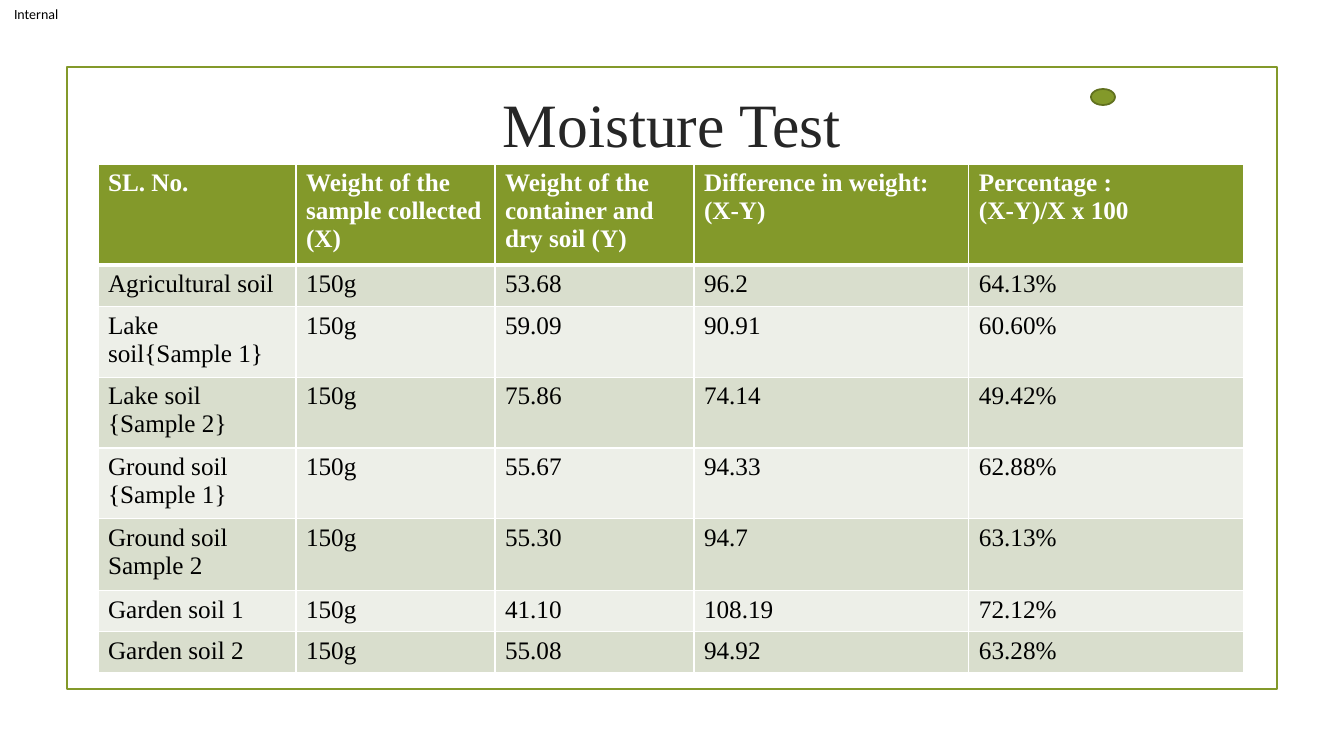
"""Build the moisture test slide."""
from lxml import etree
from pptx import Presentation
from pptx.dml.color import RGBColor
from pptx.enum.shapes import MSO_SHAPE
from pptx.enum.text import MSO_ANCHOR, PP_ALIGN
from pptx.oxml.ns import qn
from pptx.util import Emu, Pt

RECT, OVAL = MSO_SHAPE.RECTANGLE, MSO_SHAPE.OVAL
LEFT, CENTER = PP_ALIGN.LEFT, PP_ALIGN.CENTER
MIDDLE = MSO_ANCHOR.MIDDLE

TITLE = "Moisture Test"
LABEL = "Internal"
HEADS = ["SL. No.", "Weight of the sample collected (X)",
         "Weight of the container and dry soil (Y)",
         "Difference in weight: (X-Y)", "Percentage :\n(X-Y)/X x 100"]
SOILS = [
    ("Agricultural soil", "150g", "53.68", "96.2", "64.13%"),
    ("Lake soil{Sample 1}", "150g", "59.09", "90.91", "60.60%"),
    ("Lake soil {Sample 2}", "150g", "75.86", "74.14", "49.42%"),
    ("Ground soil {Sample 1}", "150g", "55.67", "94.33", "62.88%"),
    ("Ground soil Sample 2", "150g", "55.30", "94.7", "63.13%"),
    ("Garden soil 1", "150g", "41.10", "108.19", "72.12%"),
    ("Garden soil 2", "150g", "55.08", "94.92", "63.28%"),
]
WIDTHS = [198, 199, 199, 275, 275]
HEIGHTS = [97, 42, 68, 67, 68, 72, 41, 41]
COLORS = {"green": "83992A", "edge": "61711F", "dark": "262626",
          "black": "000000", "white": "FFFFFF",
          "band": "D9DECD", "pale": "EDEFE8"}
SERIF, SANS = "Times New Roman", "Calibri"


def px(n):
    return Emu(round(n * 914400 / 100.8))


def box(*lengths):
    return [px(n) for n in lengths]


def color(name):
    return RGBColor.from_string(COLORS[name])


def write(frame, text, size=18, font=SERIF, ink="black", bold=False, align=LEFT):
    frame.word_wrap = True
    frame.text = text
    for para in frame.paragraphs:
        para.alignment = align
        para.font.size = Pt(size)
        para.font.name = font
        para.font.bold = bold
        para.font.color.rgb = color(ink)


def draw(slide, kind, place, line, fill=None):
    shape = slide.shapes.add_shape(kind, *box(*place))
    shape.shadow.inherit = False
    if fill:
        shape.fill.solid()
        shape.fill.fore_color.rgb = color(fill)
    else:
        shape.fill.background()
    shape.line.color.rgb = color(line)
    shape.line.width = Pt(1.25)


def border(cell, side, width):
    props = cell._tc.get_or_add_tcPr()
    line = etree.SubElement(props, qn(f"a:ln{side}"), w=str(Pt(width)))
    fill = etree.SubElement(line, qn("a:solidFill"))
    etree.SubElement(fill, qn("a:srgbClr"), val=COLORS["white"])


def style(cell, text, row):
    head = row == 0
    for side in "LRTB":
        thick = (head and side == "B") or (row == 1 and side == "T")
        border(cell, side, 3 if thick else 1)
    cell.fill.solid()
    name = "green" if head else "band" if row % 2 else "pale"
    cell.fill.fore_color.rgb = color(name)
    write(cell.text_frame, text, ink="white" if head else "black", bold=head)


def add_grid(slide):
    rows = [HEADS, *SOILS]
    place = box(98, 164, sum(WIDTHS), sum(HEIGHTS))
    table = slide.shapes.add_table(len(rows), len(HEADS), *place).table
    for col, width in zip(table.columns, WIDTHS):
        col.width = px(width)
    for r, (row, height) in enumerate(zip(rows, HEIGHTS)):
        table.rows[r].height = px(height)
        for c, text in enumerate(row):
            style(table.cell(r, c), text, r)


def main():
    deck = Presentation()
    deck.slide_width, deck.slide_height = box(1344, 756)
    slide = deck.slides.add_slide(deck.slide_layouts[5])

    title = slide.shapes.title
    title.left, title.top, title.width, title.height = box(143, 51, 1058, 144)
    title.text_frame.vertical_anchor = MIDDLE
    write(title.text_frame, TITLE, size=44, ink="dark", align=CENTER)

    draw(slide, RECT, (67, 67, 1210, 622), "green")
    label = slide.shapes.add_textbox(*box(0, 0, 74, 28)).text_frame
    label.margin_left = px(14)
    label.margin_top = label.margin_right = label.margin_bottom = 0
    label.vertical_anchor = MIDDLE
    write(label, LABEL, size=10, font=SANS)

    add_grid(slide)
    draw(slide, OVAL, (1091, 89, 24, 16), "edge", "green")
    deck.save("out.pptx")


if __name__ == "__main__":
    main()
